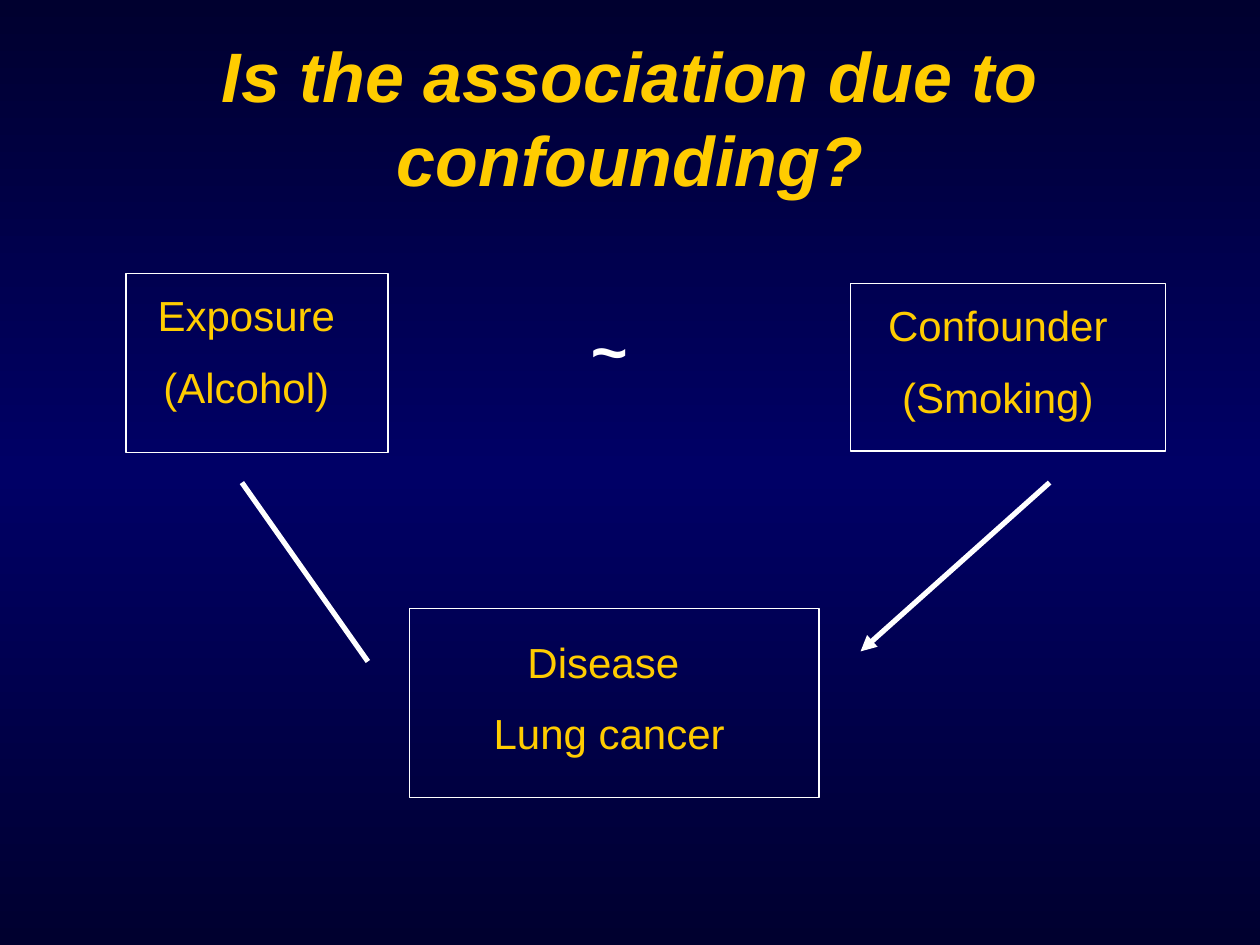
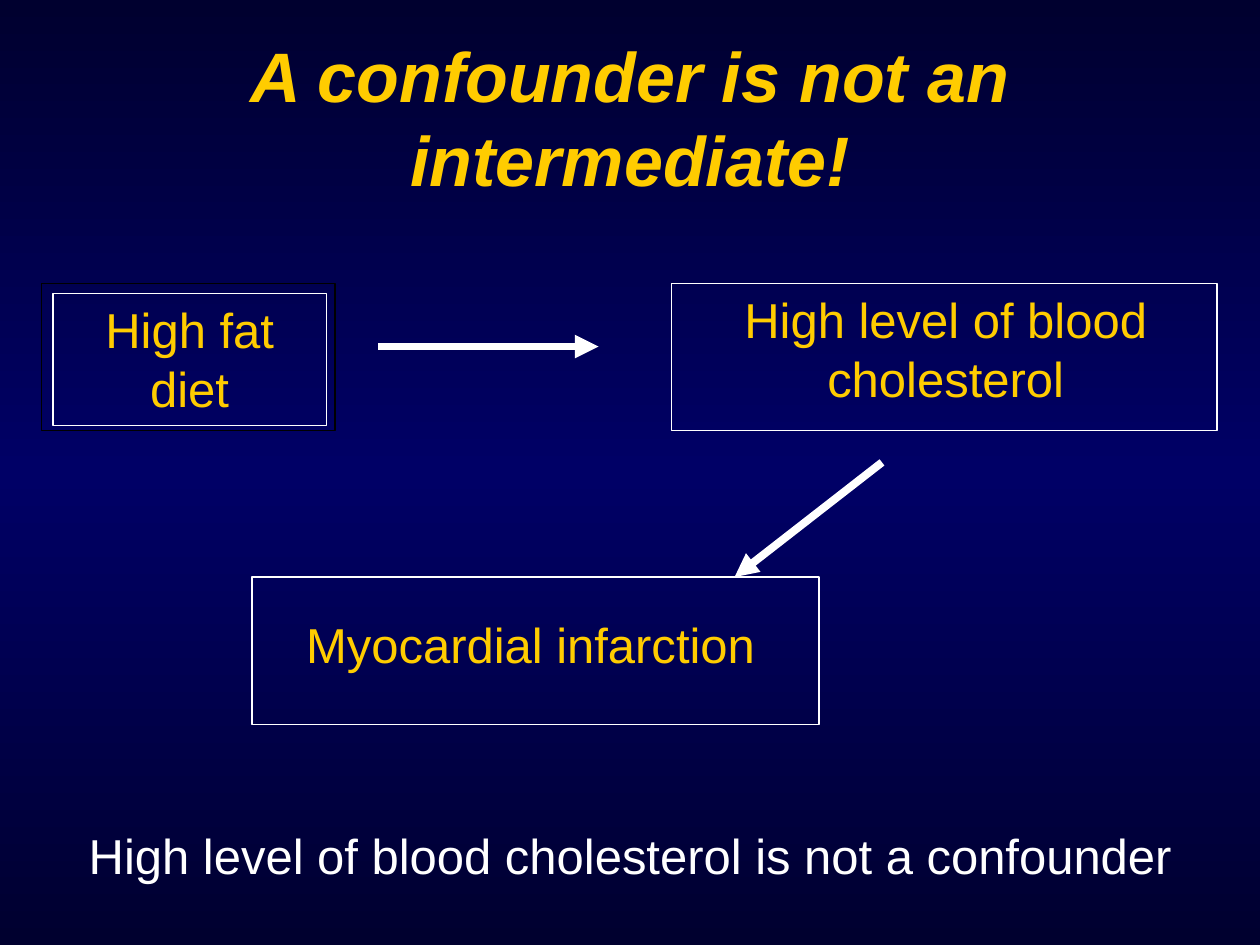
from copy import deepcopy
from dataclasses import dataclass

from pptx import Presentation
from pptx.dml.color import RGBColor as Rgb
from pptx.enum.shapes import MSO_CONNECTOR as Connector
from pptx.enum.shapes import MSO_SHAPE as Shape
from pptx.enum.text import MSO_ANCHOR as Anchor
from pptx.enum.text import MSO_AUTO_SIZE as AutoSize
from pptx.enum.text import PP_ALIGN as Align
from pptx.oxml.ns import qn
from pptx.util import Inches, Pt
from lxml.etree import SubElement


@dataclass(frozen=True)
class Theme:
    """Colours and type sizes shared by the slides."""
    font: str = "Arial"
    gold: Rgb = Rgb(0xFF, 0xCC, 0x00)
    white: Rgb = Rgb(0xFF, 0xFF, 0xFF)
    black: Rgb = Rgb(0, 0, 0)
    night: Rgb = Rgb(0, 0, 0x2F)
    navy: Rgb = Rgb(0, 0, 0x66)
    title_size: int = 40
    symbol_size: int = 36
    text_size: int = 28
    node_size: int = 24
    outline: float = 0.75


THEME = Theme()
TITLE_BOX = (0.5, 0.3, 9, 1.25)


def place(box):
    """Turn a box in inches into lengths."""
    return [Inches(value) for value in box]


def inner(box, offset):
    """Return a box placed at an offset (left, top, width, height) within another."""
    left, top, width, height = offset
    return box[0] + left, box[1] + top, width, height


def format_text(paragraph, **values):
    """Centre a paragraph and set its font values."""
    paragraph.alignment = Align.CENTER
    color = values.pop("color", THEME.gold)
    for name, value in {"name": THEME.font, **values}.items():
        setattr(paragraph.font, name, value)
    paragraph.font.color.rgb = color


def set_outline(line, color, width):
    """Give a line its colour and width in points."""
    line.color.rgb = color
    line.width = Pt(width)


def paint_background(master):
    """Fill the master with a vertical gradient, lightest in the middle."""
    fill = master.background.fill
    fill.gradient()
    fill.gradient_angle = 270
    last_stop = fill.gradient_stops[1]
    stop_list = master.element.find(f".//{qn('p:bg')}//{qn('a:gsLst')}")
    stop_list.append(deepcopy(stop_list[-1]))
    shades = [(0, THEME.night), (0.5, THEME.navy), (1, THEME.night)]
    for stop, (position, shade) in zip(fill.gradient_stops, shades):
        stop.position = position
        stop.color.rgb = shade


def add_titled_slide(deck, title):
    """Add a slide with the shared title style."""
    slide = deck.slides.add_slide(deck.slide_layouts[5])
    heading = slide.shapes.title
    heading.left, heading.top, heading.width, heading.height = place(TITLE_BOX)
    heading.text = title
    frame = heading.text_frame
    for name, value in {"word_wrap": True, "auto_size": AutoSize.NONE,
                        "vertical_anchor": Anchor.MIDDLE}.items():
        setattr(frame, name, value)
    format_text(frame.paragraphs[0], size=Pt(THEME.title_size), bold=True, italic=True)
    return slide


def add_label(slide, box, lines, size, **font):
    """Add centred text, one paragraph a line."""
    label = slide.shapes.add_textbox(*place(box))
    label.text_frame.word_wrap = True
    label.text_frame.text = "\n".join(lines)
    for index, paragraph in enumerate(label.text_frame.paragraphs):
        if index:
            paragraph.space_before = Pt(12)
        format_text(paragraph, size=Pt(size), **font)
    return label


def add_node(slide, box, offset, lines, size, color=THEME.white):
    """Add a framed factor with its label at an offset inside the frame."""
    label = add_label(slide, inner(box, offset), lines, size)
    frame = slide.shapes.add_shape(Shape.RECTANGLE, *place(box))
    frame.shadow.inherit = False
    frame.fill.background()
    set_outline(frame.line, color, THEME.outline)
    return label


def add_link(slide, start, end, width, arrow=True):
    """Add a white line, with an arrowhead at its end if asked."""
    link = slide.shapes.add_connector(Connector.STRAIGHT, *place(start + end))
    set_outline(link.line, THEME.white, width)
    properties = link.element.spPr
    if arrow:
        SubElement(properties.find(qn("a:ln")), qn("a:tailEnd"), type="triangle")
    SubElement(properties, qn("a:effectLst"))


def build_confounding(deck):
    """Show exposure and confounder both tied to the disease."""
    slide = add_titled_slide(deck, "Is the association due to confounding?")
    nodes = [
        ((1, 2.17, 2.08, 1.42), (-0.42, 0.08, 2.75, 1.1), ["Exposure", "(Alcohol)"]),
        ((6.75, 2.25, 2.5, 1.33), (-0.08, 0.08, 2.5, 1.1), ["Confounder", "(Smoking)"]),
        ((3.25, 4.83, 3.25, 1.5), (-0.25, 0.17, 3.67, 1.1), ["Disease ", "Lung cancer"]),
    ]
    for box, offset, lines in nodes:
        add_node(slide, box, offset, lines, THEME.node_size)
    add_link(slide, (8.33, 3.83), (6.83, 5.17), 3)
    add_link(slide, (1.92, 3.83), (2.92, 5.25), 3, arrow=False)
    add_label(slide, (3.75, 2.42, 2.17, 0.7), ["~"], THEME.symbol_size,
              color=THEME.white, bold=True)


def build_intermediate(deck):
    """Show a causal chain that runs through an intermediate."""
    slide = add_titled_slide(deck, "A confounder is not an intermediate!")
    diet = add_node(slide, (0.33, 2.25, 2.33, 1.17), (0.09, 0.08, 2.17, 1.05),
                    ["High fat diet"], THEME.text_size, THEME.black)
    set_outline(diet.line, THEME.white, THEME.outline)
    add_node(slide, (2, 4.58, 4.5, 1.17), (0, 0.25, 4.42, 0.57),
             ["Myocardial infarction"], THEME.text_size)
    add_node(slide, (5.33, 2.25, 4.33, 1.17), (0.09, 0, 4.17, 1.03),
             ["High level of blood cholesterol"], THEME.text_size)
    add_link(slide, (3, 2.75), (4.75, 2.75), 4.5)
    add_link(slide, (7, 3.67), (5.83, 4.58), 4.5)
    add_label(slide, (0, 6.5, 10, 0.57),
              ["High level of blood cholesterol is not a confounder"],
              THEME.text_size, color=THEME.white)


def main():
    """Build and save the two slides."""
    deck = Presentation()
    deck.slide_width, deck.slide_height = place((10, 7.5))
    paint_background(deck.slide_master)
    build_confounding(deck)
    build_intermediate(deck)
    deck.save("out.pptx")


if __name__ == "__main__":
    main()
